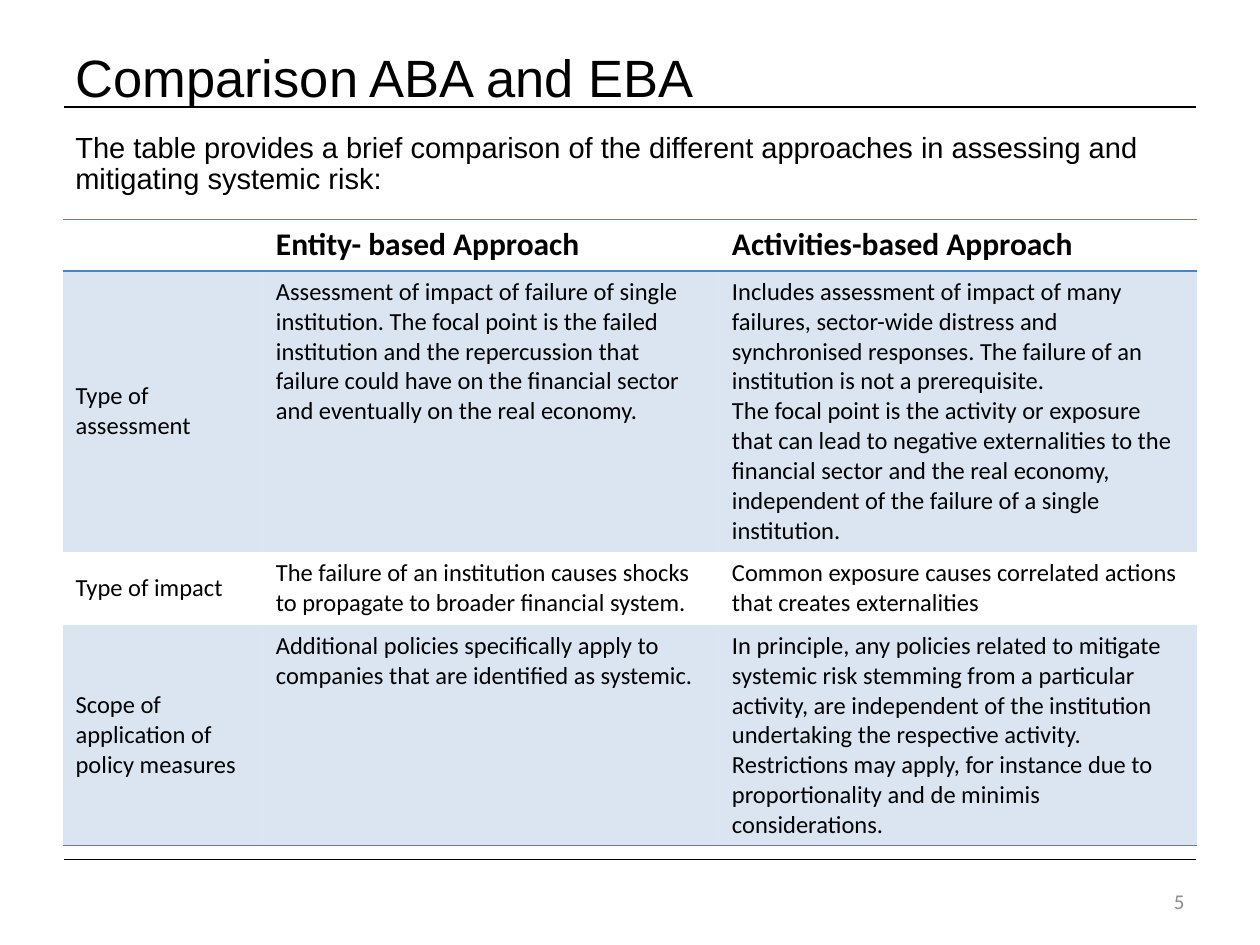
import pptx
import pptx.util
import pptx.dml.color
import pptx.enum.shapes
import pptx.enum.text
import pptx.oxml.ns
from lxml import etree

Inches = pptx.util.Inches
Pt = pptx.util.Pt
Anchor = pptx.enum.text.MSO_ANCHOR
Align = pptx.enum.text.PP_ALIGN
qn = pptx.oxml.ns.qn

BLACK = pptx.dml.color.RGBColor(0x00, 0x00, 0x00)
GREY = pptx.dml.color.RGBColor(0x8C, 0x8C, 0x8C)
BLUE = pptx.dml.color.RGBColor(0x4F, 0x81, 0xBD)

COLUMN_WIDTHS = [1.59, 3.62, 3.79]
ROW_HEIGHTS = [0.41, 2.23, 0.58, 1.75]
ROWS = [
    ["", "Entity- based Approach", "Activities-based Approach"],
    [
        "Type of assessment",
        "Assessment of impact of failure of single institution. The focal point is "
        "the failed institution and the repercussion that failure could have on the "
        "financial sector and eventually on the real economy.",
        "Includes assessment of impact of many failures, sector-wide distress and "
        "synchronised responses. The failure of an institution is not a prerequisite.\n"
        "The focal point is the activity or exposure that can lead to negative "
        "externalities to the financial sector and the real economy, independent of "
        "the failure of a single institution.",
    ],
    [
        "Type of impact",
        "The failure of an institution causes shocks to propagate to broader "
        "financial system.",
        "Common exposure causes correlated actions that creates externalities",
    ],
    [
        "Scope of application of policy measures",
        "Additional policies specifically apply to companies that are identified as "
        "systemic.",
        "In principle, any policies related to mitigate systemic risk stemming from a "
        "particular activity, are independent of the institution undertaking the "
        "respective activity. Restrictions may apply, for instance due to "
        "proportionality and de minimis considerations.",
    ],
]


def style_paragraph(para, font_name, size, color=BLACK, bold=False):
    para.font.name = font_name
    para.font.size = Pt(size)
    para.font.color.rgb = color
    para.font.bold = bold


def add_rule(page, top):
    rule = page.shapes.add_connector(
        pptx.enum.shapes.MSO_CONNECTOR.STRAIGHT,
        Inches(0.51), Inches(top), Inches(9.49), Inches(top))
    rule.line.color.rgb = BLACK
    rule.line.width = Pt(0.75)
    etree.SubElement(rule._element.spPr, qn("a:effectLst"))


def add_text(page, text, area, font_name, size, color=BLACK, anchor=Anchor.MIDDLE):
    box = page.shapes.add_textbox(*[Inches(length) for length in area])
    frame = box.text_frame
    frame.word_wrap = True
    frame.vertical_anchor = anchor
    frame.text = text
    para = frame.paragraphs[0]
    style_paragraph(para, font_name, size, color)
    return para


def set_borders(cell, top, bottom):
    """Draw the chosen horizontal borders in blue and turn all others off."""
    properties = cell._tc.get_or_add_tcPr()
    for side, shown in (("L", False), ("R", False), ("T", top), ("B", bottom)):
        line = etree.SubElement(properties, qn(f"a:ln{side}"), w=str(Pt(1)))
        if shown:
            fill = etree.SubElement(line, qn("a:solidFill"))
            etree.SubElement(fill, qn("a:srgbClr"), val=str(BLUE))
        else:
            etree.SubElement(line, qn("a:noFill"))


def set_fill(cell, shaded):
    if not shaded:
        cell.fill.background()
        return
    cell.fill.solid()
    cell.fill.fore_color.rgb = BLUE
    color = cell._tc.tcPr.find(qn("a:solidFill")).find(qn("a:srgbClr"))
    etree.SubElement(color, qn("a:alpha"), val="20000")


def add_comparison(page):
    table = page.shapes.add_table(
        len(ROWS), len(COLUMN_WIDTHS), Inches(0.5), Inches(1.74),
        Inches(sum(COLUMN_WIDTHS)), Inches(sum(ROW_HEIGHTS))).table
    table.first_row = True
    table.horz_banding = False
    for column, width in zip(table.columns, COLUMN_WIDTHS):
        column.width = Inches(width)
    for row, height in zip(table.rows, ROW_HEIGHTS):
        row.height = Inches(height)

    last = len(ROWS) - 1
    for r, texts in enumerate(ROWS):
        for c, text in enumerate(texts):
            cell = table.cell(r, c)
            cell.text = text
            header = r == 0
            for para in cell.text_frame.paragraphs:
                style_paragraph(para, "Calibri", 18 if header else 14, bold=header)
            if c == 0 and not header:
                cell.vertical_anchor = Anchor.MIDDLE
            set_borders(cell, top=r in (0, 1), bottom=r in (0, last))
            set_fill(cell, shaded=r % 2 == 1)


def main():
    deck = pptx.Presentation()
    deck.slide_width = Inches(10)
    deck.slide_height = Inches(7.5)
    page = deck.slides.add_slide(deck.slide_layouts[6])

    for top in (0.85, 6.82):
        add_rule(page, top)
    add_text(page, "Comparison ABA and EBA", (0.5, 0.3, 9, 0.61), "Arial", 30)
    intro = add_text(
        page,
        "The table provides a brief comparison of the different approaches in "
        "assessing and mitigating systemic risk:",
        (0.5, 1.01, 9, 0.63), "Arial", 16.6, anchor=Anchor.TOP)
    intro.line_spacing = 0.9
    number = add_text(page, "5", (7.17, 6.95, 2.33, 0.4), "Calibri", 12, GREY)
    number.alignment = Align.RIGHT
    add_comparison(page)

    deck.save("out.pptx")


if __name__ == "__main__":
    main()
